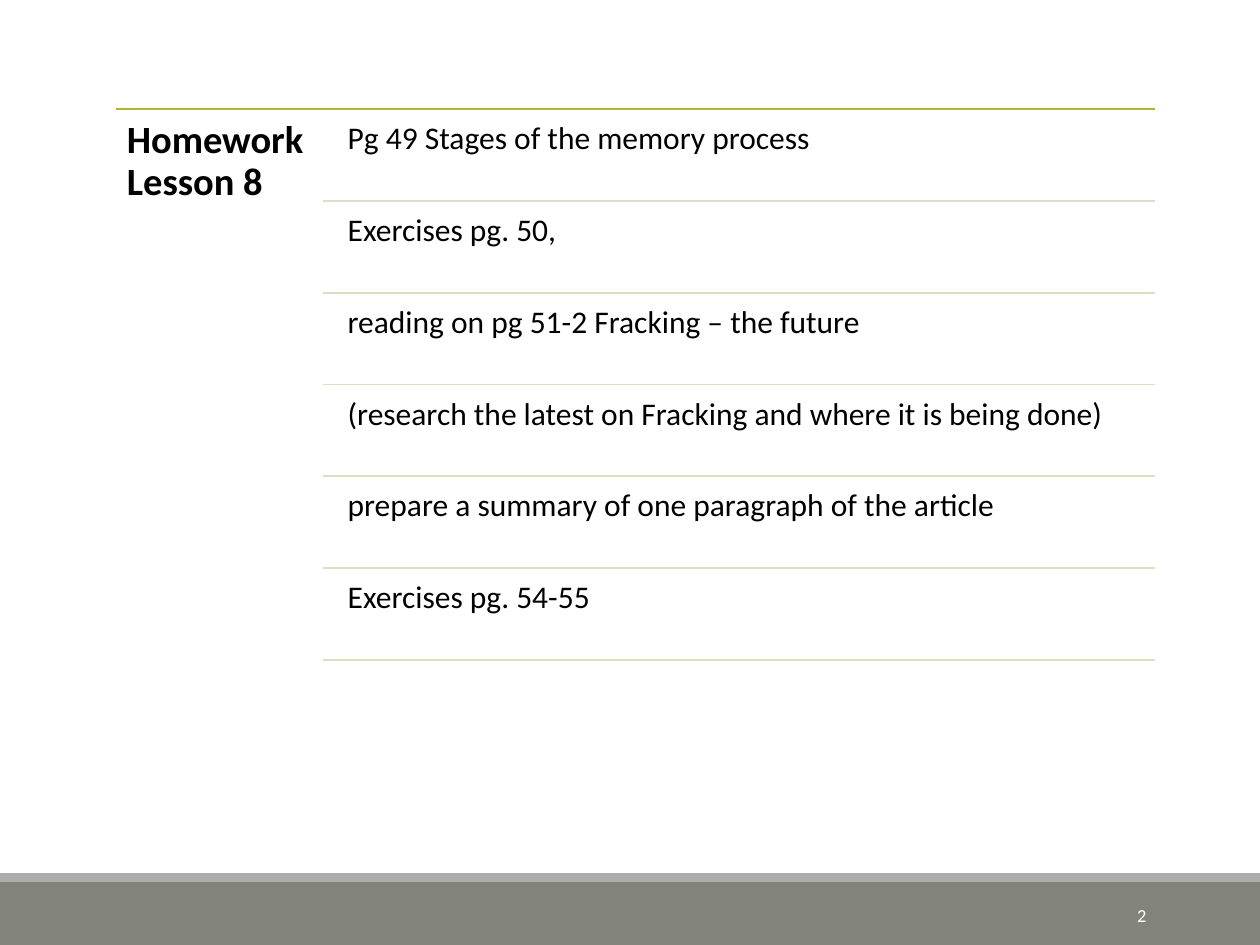
from lxml import etree
from pptx import Presentation
from pptx.dml.color import RGBColor
from pptx.enum.shapes import MSO_CONNECTOR, MSO_SHAPE
from pptx.enum.text import MSO_ANCHOR, PP_ALIGN
from pptx.oxml.ns import qn
from pptx.util import Cm, Pt

STRAIGHT = MSO_CONNECTOR.STRAIGHT
RECTANGLE = MSO_SHAPE.RECTANGLE
TOP, MIDDLE = MSO_ANCHOR.TOP, MSO_ANCHOR.MIDDLE
LEFT, RIGHT = PP_ALIGN.LEFT, PP_ALIGN.RIGHT

HEADING = "Homework Lesson 8"
TASKS = [
    "Pg 49 Stages of the memory process",
    "Exercises pg. 50,",
    "reading on pg 51-2 Fracking – the future",
    "(research the latest on Fracking and where it is being done)",
    "prepare a summary of one paragraph of the article",
    "Exercises pg. 54-55",
]
PAGE_NUMBER = "2"

FONT = "Calibri"
COLOURS = {
    "text": "000000",
    "number": "FFFFFF",
    "footer": "82847C",
    "strip": "ACADA8",
    "top_rule": "B3B435",
    "task_rule": "DDDEBF",
}
PAGE_WIDTH, PAGE_HEIGHT = 25.4, 19.05
LIST_LEFT, LIST_RIGHT, LIST_TOP = 2.33, 23.29, 2.2
RULE_LEFT, TASK_LEFT = 6.52, 6.83
TASK_TOP, TASK_HEIGHT, TASK_PITCH = 2.29, 1.76, 1.85
FOOTER_TOP, STRIP_HEIGHT = 17.78, 0.18


def colour(name):
    return RGBColor.from_string(COLOURS[name])


def add_band(page, top, height, fill):
    band = page.shapes.add_shape(RECTANGLE, 0, Cm(top), Cm(PAGE_WIDTH), Cm(height))
    band.shadow.inherit = False
    band.fill.solid()
    band.fill.fore_color.rgb = colour(fill)
    band.line.fill.background()


def add_rule(page, left, top, line_colour):
    rule = page.shapes.add_connector(STRAIGHT, Cm(left), Cm(top), Cm(LIST_RIGHT), Cm(top))
    rule.line.color.rgb = colour(line_colour)
    rule.line.width = Pt(1)
    etree.SubElement(rule._element.spPr, qn("a:effectLst"))


def add_text(page, text, place, size, inset, ink="text", bold=False,
             align=LEFT, anchor=TOP, spacing=0.9):
    box = page.shapes.add_textbox(*[Cm(length) for length in place])
    frame = box.text_frame
    frame.word_wrap = True
    frame.vertical_anchor = anchor
    frame.margin_left = frame.margin_right = Cm(inset)
    frame.margin_top = frame.margin_bottom = Cm(inset)
    frame.text = text
    para = frame.paragraphs[0]
    para.alignment = align
    para.line_spacing = spacing
    font = para.runs[0].font
    font.name, font.size, font.bold = FONT, Pt(size), bold
    font.color.rgb = colour(ink)


def main():
    deck = Presentation()
    deck.slide_width, deck.slide_height = Cm(PAGE_WIDTH), Cm(PAGE_HEIGHT)
    page = deck.slides.add_slide(deck.slide_layouts[6])

    add_band(page, FOOTER_TOP, PAGE_HEIGHT - FOOTER_TOP, "footer")
    add_band(page, FOOTER_TOP - STRIP_HEIGHT, STRIP_HEIGHT, "strip")
    add_text(page, PAGE_NUMBER, (20.62, 17.93, 2.74, 1.02), 10.5, 0.25,
             ink="number", align=RIGHT, anchor=MIDDLE, spacing=1.0)

    add_rule(page, LIST_LEFT, LIST_TOP, "top_rule")
    add_text(page, HEADING, (LIST_LEFT, LIST_TOP, 4.19, 11.18), 22, 0.23, bold=True)
    for index, task in enumerate(TASKS):
        top = TASK_TOP + index * TASK_PITCH
        add_text(page, task, (TASK_LEFT, top, LIST_RIGHT - TASK_LEFT, TASK_HEIGHT), 18, 0.18)
        add_rule(page, RULE_LEFT, top + TASK_HEIGHT, "task_rule")

    deck.save("out.pptx")


if __name__ == "__main__":
    main()
